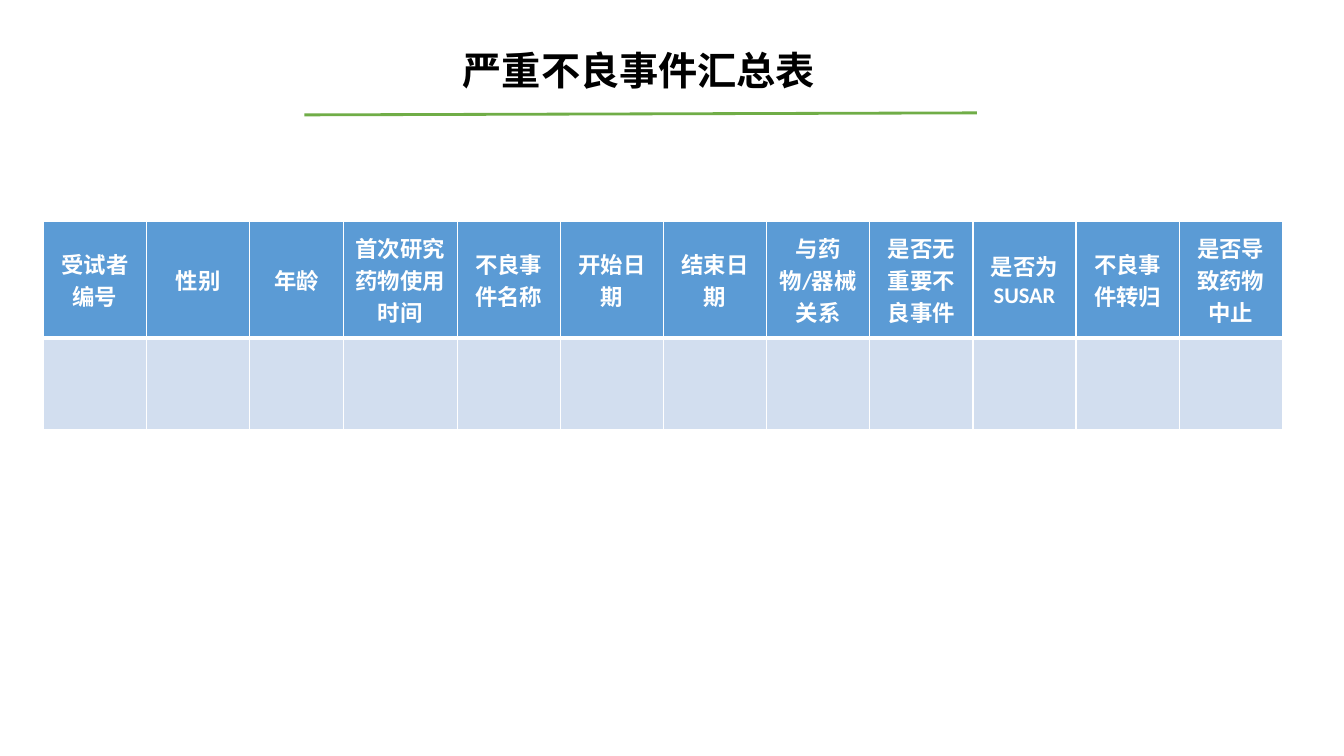
from dataclasses import dataclass

from pptx import Presentation
from pptx.dml.color import RGBColor
from pptx.enum.shapes import MSO_CONNECTOR
from pptx.enum.text import MSO_ANCHOR, MSO_AUTO_SIZE, PP_ALIGN
from pptx.oxml.ns import qn
from pptx.util import Inches, Pt
from lxml import etree

STRAIGHT = MSO_CONNECTOR.STRAIGHT
MIDDLE = MSO_ANCHOR.MIDDLE
NO_AUTOFIT = MSO_AUTO_SIZE.NONE
LEFT, CENTER = PP_ALIGN.LEFT, PP_ALIGN.CENTER


@dataclass(frozen=True)
class Theme:
    title_color: str = "000000"
    rule_color: str = "70AD47"
    header_fill: str = "5B9BD5"
    body_fill: str = "D2DEEF"
    white: str = "FFFFFF"
    title_font: str = "Noto Sans CJK SC"
    table_font: str = "Calibri"
    title_size: int = 28
    table_size: int = 16
    rule_width: int = 2
    thin_border: int = 1
    thick_border: int = 3


THEME = Theme()
TITLE = "严重不良事件汇总表"
HEADERS = [
    "受试者编号", "性别", "年龄", "首次研究药物使用时间", "不良事件名称", "开始日期",
    "结束日期", "与药物/器械关系", "是否无重要不良事件", "是否为SUSAR", "不良事件转归",
    "是否导致药物中止",
]
SPECIAL_WIDTHS = {"年龄": 0.93, "首次研究药物使用时间": 1.13}
ROW_HEIGHTS = [1.15, 0.91]


def apply_format(target, values):
    for name, value in values.items():
        setattr(target, name, value)


def format_font(paragraph, typeface, size, color):
    for run in paragraph.runs:
        apply_format(run.font, {"name": typeface, "size": Pt(size), "bold": True})
        run.font.color.rgb = RGBColor.from_string(color)
        east_asian = etree.SubElement(run.font._element, qn("a:ea"))
        east_asian.set("typeface", THEME.title_font)


def set_borders(cell, widths):
    properties = cell._tc.get_or_add_tcPr()
    for side, width in zip("LRTB", widths):
        line = etree.SubElement(properties, qn(f"a:ln{side}"), w=str(Pt(width)))
        fill = etree.SubElement(line, qn("a:solidFill"))
        etree.SubElement(fill, qn("a:srgbClr"), val=THEME.white)


def add_title(slide, left, top, width, height):
    title = slide.shapes.title
    apply_format(title, {
        "left": Inches(left), "top": Inches(top),
        "width": Inches(width), "height": Inches(height),
    })
    frame = title.text_frame
    frame.text = TITLE
    apply_format(frame, {
        "margin_left": Inches(0.13), "margin_right": Inches(0.13),
        "margin_top": Inches(0.07), "margin_bottom": Inches(0.07),
        "vertical_anchor": MIDDLE, "auto_size": NO_AUTOFIT, "word_wrap": True,
    })
    paragraph = frame.paragraphs[0]
    paragraph.alignment = LEFT
    format_font(paragraph, THEME.title_font, THEME.title_size, THEME.title_color)


def add_rule(slide, left, top, width, rise):
    rule = slide.shapes.add_connector(
        STRAIGHT, Inches(left), Inches(top), Inches(left + width), Inches(top - rise))
    rule.line.color.rgb = RGBColor.from_string(THEME.rule_color)
    rule.line.width = Pt(THEME.rule_width)
    etree.SubElement(rule._element.spPr, qn("a:effectLst"))


def add_event_table(slide, left, top, width, height):
    table = slide.shapes.add_table(
        len(ROW_HEIGHTS), len(HEADERS),
        Inches(left), Inches(top), Inches(width), Inches(height)).table
    regular_width = ((width - sum(SPECIAL_WIDTHS.values()))
                     / (len(HEADERS) - len(SPECIAL_WIDTHS)))
    for column, header in zip(table.columns, HEADERS):
        column.width = Inches(SPECIAL_WIDTHS.get(header, regular_width))
    for row, row_height in zip(table.rows, ROW_HEIGHTS):
        row.height = Inches(row_height)

    thin, thick = THEME.thin_border, THEME.thick_border
    row_styles = [
        (THEME.header_fill, (thin, thin, thin, thick)),
        (THEME.body_fill, (thin, thin, thick, thin)),
    ]
    for row, (fill, borders) in zip(table.rows, row_styles):
        for cell in row.cells:
            set_borders(cell, borders)
            cell.fill.solid()
            cell.fill.fore_color.rgb = RGBColor.from_string(fill)
            cell.vertical_anchor = MIDDLE
    for cell, header in zip(table.rows[0].cells, HEADERS):
        cell.text = header
        paragraph = cell.text_frame.paragraphs[0]
        paragraph.alignment = CENTER
        format_font(paragraph, THEME.table_font, THEME.table_size, THEME.white)


def main():
    presentation = Presentation()
    presentation.slide_width = Inches(13.33)
    presentation.slide_height = Inches(7.5)
    slide = presentation.slides.add_slide(presentation.slide_layouts[5])
    add_rule(slide, 3.02, 1.14, 6.67, 0.02)
    add_title(slide, 4.46, 0.39, 7.84, 0.61)
    add_event_table(slide, 0.43, 2.2, 12.29, sum(ROW_HEIGHTS))
    presentation.save("out.pptx")


if __name__ == "__main__":
    main()
